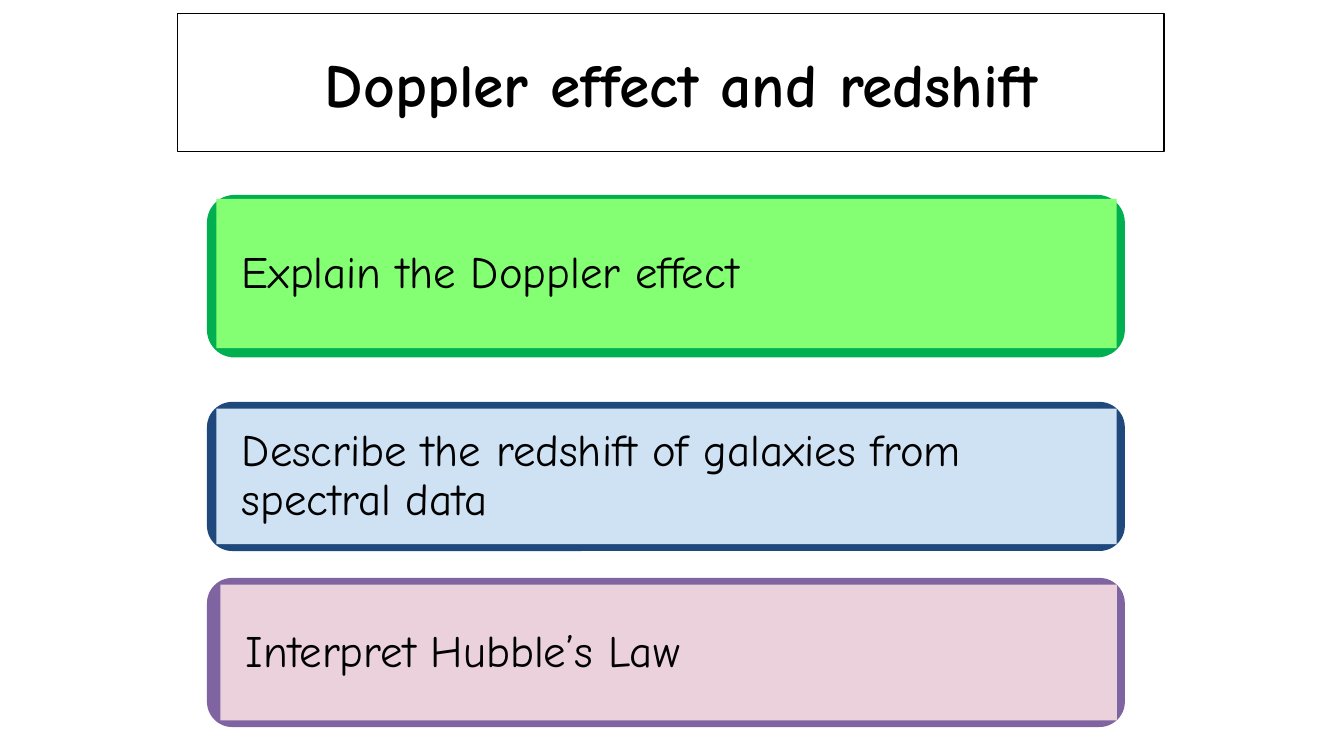
from pptx import Presentation
from pptx.dml.color import RGBColor
from pptx.enum.shapes import MSO_SHAPE
from pptx.enum.text import MSO_ANCHOR, MSO_AUTO_SIZE, PP_ALIGN
from pptx.util import Inches, Pt

COLORS = {
    "black": "000000", "white": "FFFFFF",
    "green": "00B050", "light_green": "84FE72",
    "navy": "1F497D", "light_blue": "CFE2F3",
    "purple": "8064A2", "light_pink": "EAD1DC",
}
TITLE = " Doppler effect and redshift"
GOALS = [
    ("Explain the Doppler effect", "green", "light_green", 1.45, 1.21, 0.07, 0.03),
    ("Describe the redshift of galaxies from spectral data",
     "navy", "light_blue", 2.99, 1.11, 0.07, 0.05),
    ("Interpret Hubble’s Law", "purple", "light_pink", 4.3, 1.11, 0.1, 0.05),
]
FRAME_LEFT, FRAME_WIDTH, PANEL_RIGHT = 1.54, 6.83, 8.31
PANEL_TRIM = 0.1
TITLE_FONT = {"name": "Comic Neue", "size": Pt(33), "bold": True}
GOAL_FONT = {"name": "Comic Neue", "size": Pt(24), "bold": False}


def rgb(name):
    return RGBColor.from_string(COLORS[name])


def set_text(sp, text, font, align, inset_x, inset_y, spacing):
    tf = sp.text_frame
    frame = {
        "word_wrap": True, "auto_size": MSO_AUTO_SIZE.NONE,
        "vertical_anchor": MSO_ANCHOR.MIDDLE,
        "margin_left": Inches(inset_x), "margin_right": Inches(inset_x),
        "margin_top": Inches(inset_y), "margin_bottom": Inches(inset_y),
    }
    for key, value in frame.items():
        setattr(tf, key, value)
    p = tf.paragraphs[0]
    p.alignment, p.line_spacing = align, spacing
    r = p.add_run()
    r.text = text
    for key, value in font.items():
        setattr(r.font, key, value)
    r.font.color.rgb = rgb("black")


def add_box(s, kind, fill, left, top, width, height):
    sp = s.shapes.add_shape(kind, *map(Inches, (left, top, width, height)))
    sp.shadow.inherit = False
    sp.fill.solid()
    sp.fill.fore_color.rgb = rgb(fill)
    sp.line.fill.background()
    return sp


def add_title(s):
    sp = s.shapes.title
    box = {"left": 1.32, "top": 0.1, "width": 7.34, "height": 1.03}
    for key, value in box.items():
        setattr(sp, key, Inches(value))
    sp.fill.solid()
    sp.fill.fore_color.rgb = rgb("white")
    sp.line.color.rgb = rgb("black")
    sp.line.width = Pt(0.75)
    set_text(sp, TITLE, TITLE_FONT, PP_ALIGN.CENTER, 0.07, 0.04, 1.0)


def add_goal(s, text, frame, panel, top, height, dx, dy):
    sp = add_box(s, MSO_SHAPE.ROUNDED_RECTANGLE, frame,
                 FRAME_LEFT, top, FRAME_WIDTH, height)
    sp.adjustments[0] = 0.17
    left = FRAME_LEFT + dx
    sp = add_box(s, MSO_SHAPE.RECTANGLE, panel,
                 left, top + dy, PANEL_RIGHT - left, height - PANEL_TRIM)
    set_text(sp, text, GOAL_FONT, PP_ALIGN.LEFT, 0.19, 0, 0.9)


def main():
    """Build the lesson goals slide."""
    prs = Presentation()
    prs.slide_width = Inches(10)
    prs.slide_height = prs.slide_width * 9 // 16
    s = prs.slides.add_slide(prs.slide_layouts[5])
    add_title(s)
    for goal in GOALS:
        add_goal(s, *goal)
    prs.save("out.pptx")


if __name__ == "__main__":
    main()
